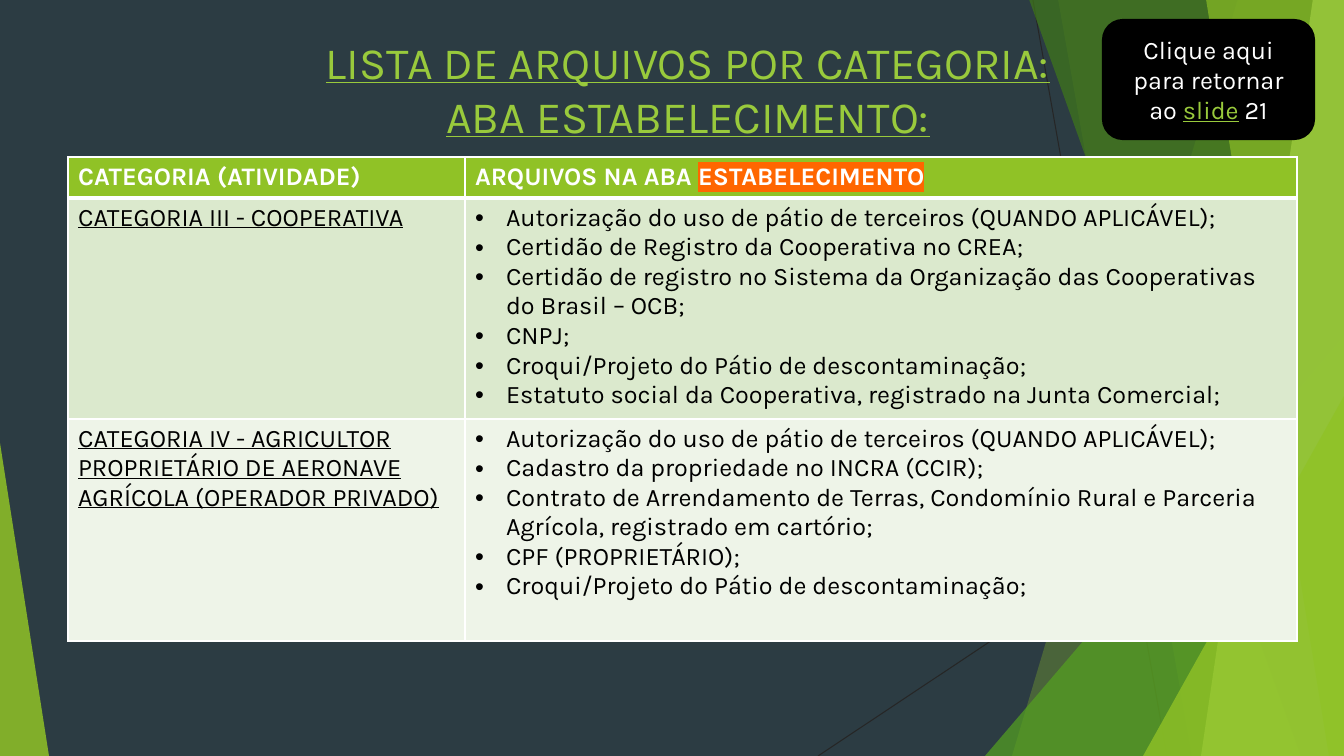
from lxml import etree
from pptx import Presentation
from pptx.dml.color import RGBColor
from pptx.enum.shapes import MSO_CONNECTOR, MSO_SHAPE
from pptx.enum.text import MSO_ANCHOR, MSO_AUTO_SIZE, PP_ALIGN
from pptx.oxml.ns import qn
from pptx.util import Pt

PX = 914400 / 100.8
WIDTH, HEIGHT = 1344, 756
TITLE_ONLY = 5
LINE = MSO_CONNECTOR.STRAIGHT
TRIANGLE, ROUNDED = MSO_SHAPE.ISOSCELES_TRIANGLE, MSO_SHAPE.ROUNDED_RECTANGLE
CENTER, LEFT = PP_ALIGN.CENTER, PP_ALIGN.LEFT
TOP, MIDDLE = MSO_ANCHOR.TOP, MSO_ANCHOR.MIDDLE
FONT = "Karla"
GREEN, LINK, WHITE, BLACK = "90C226", "99CA3C", "FFFFFF", "000000"

TITLE = ["LISTA DE ARQUIVOS POR CATEGORIA:", "ABA ESTABELECIMENTO:"]
CATEGORIES = [
    ("CATEGORIA III - COOPERATIVA", "DBE9CD", [
        "Autorização do uso de pátio de terceiros (QUANDO APLICÁVEL);",
        "Certidão de Registro da Cooperativa no CREA;",
        "Certidão de registro no Sistema da Organização das Cooperativas do Brasil – OCB;",
        "CNPJ;",
        "Croqui/Projeto do Pátio de descontaminação;",
        "Estatuto social da Cooperativa, registrado na Junta Comercial;",
    ]),
    ("CATEGORIA IV - AGRICULTOR PROPRIETÁRIO DE AERONAVE AGRÍCOLA (OPERADOR PRIVADO)", "EEF4E8", [
        "Autorização do uso de pátio de terceiros (QUANDO APLICÁVEL);",
        "Cadastro da propriedade no INCRA (CCIR);",
        "Contrato de Arrendamento de Terras, Condomínio Rural e Parceria Agrícola, "
        "registrado em cartório;",
        "CPF (PROPRIETÁRIO);",
        "Croqui/Projeto do Pátio de descontaminação;",
    ]),
]


def px(*lengths):
    return [round(length * PX) for length in lengths]


def color(value):
    return RGBColor.from_string(value)


def fill_shape(shape, value, opacity=100):
    shape.shadow.inherit = False
    shape.fill.solid()
    shape.fill.fore_color.rgb = color(value)
    shape.line.fill.background()
    if opacity < 100:
        tint = shape.fill._xPr.find(qn("a:solidFill"))[0]
        etree.SubElement(tint, qn("a:alpha"), val=str(opacity * 1000))


def add_run(para, text, value, size=18, bold=False, underline=False):
    run = para.add_run()
    run.text = text
    font = run.font
    font.name, font.size, font.bold, font.underline = FONT, Pt(size), bold, underline
    font.color.rgb = color(value)
    return run


def highlight(run, value):
    mark = etree.Element(qn("a:highlight"))
    etree.SubElement(mark, qn("a:srgbClr"), val=value)
    run.font.fill._xPr.find(qn("a:solidFill")).addnext(mark)


def add_bullet(para, indent):
    props = para._p.get_or_add_pPr()
    props.set("marL", str(indent))
    props.set("indent", str(-indent))
    etree.SubElement(props, qn("a:buFont"), typeface="Arial")
    etree.SubElement(props, qn("a:buChar"), char="•")


def set_borders(cell, top=1, bottom=1):
    props = cell._tc.get_or_add_tcPr()
    for place, (side, points) in enumerate(zip("LRTB", (1, 1, top, bottom))):
        border = etree.Element(qn(f"a:ln{side}"), w=str(Pt(points)))
        solid = etree.SubElement(border, qn("a:solidFill"))
        etree.SubElement(solid, qn("a:srgbClr"), val=WHITE)
        props.insert(place, border)


def draw_facets(page, width, height):
    # Thin crossing lines
    for ends in ((1033, 0, 1167, height), (width, 406, 818, height)):
        line = page.shapes.add_connector(LINE, *px(*ends))
        line.line.color.rgb = color("262626")
        line.line.width = Pt(0.75)
        etree.SubElement(line._element.spPr, qn("a:effectLst"))

    def band(top_x, bottom_x, value, opacity):
        builder = page.shapes.build_freeform(top_x, -1, scale=PX)
        builder.add_line_segments([(width, -1), (width, height), (bottom_x, height)])
        fill_shape(builder.convert_to_shape(), value, opacity)

    def triangle(left, top, right, tip, value, opacity):
        area = px(left, top, right - left, height - top)
        shape = page.shapes.add_shape(TRIANGLE, *area)
        shape.adjustments[0] = tip
        fill_shape(shape, value, opacity)

    # Translucent panels, back to front
    band(1238, 1012, GREEN, 30)
    band(1058, 1192, GREEN, 20)
    triangle(985, 336, width, 1, "54A021", 72)
    band(1029, 1301, "3F7819", 70)
    band(1313, 1201, "C0E474", 70)
    band(1206, 1329, GREEN, 65)
    triangle(1143, 396, width, 1, GREEN, 80)
    triangle(0, 443, 49, 0, GREEN, 85)


def place_title(page, box):
    title = page.shapes.title
    page.shapes.element.append(title.element)  # bring in front of the facets
    title.left, title.top, title.width, title.height = px(*box)
    frame = title.text_frame
    frame.word_wrap, frame.auto_size, frame.vertical_anchor = True, MSO_AUTO_SIZE.NONE, TOP
    for index, text in enumerate(TITLE):
        para = frame.add_paragraph() if index else frame.paragraphs[0]
        para.alignment = CENTER
        add_run(para, text, LINK, size=32, underline=True)


def add_file_table(page, box):
    heights = (41, 221, 222)
    table = page.shapes.add_table(3, 2, *px(*box)).table
    table.horz_banding = False
    table.columns[0].width, table.columns[1].width = px(397, box[2] - 397)
    for row, height in zip(table.rows, px(*heights)):
        row.height = height

    # Cell fills and borders
    fills = [GREEN] + [fill for _, fill, _ in CATEGORIES]
    for index, fill in enumerate(fills):
        for cell in table.rows[index].cells:
            cell.fill.solid()
            cell.fill.fore_color.rgb = color(fill)
            set_borders(cell, top=3 if index == 1 else 1, bottom=1 if index else 3)

    # Header
    left, right = [cell.text_frame.paragraphs[0] for cell in table.rows[0].cells]
    add_run(left, "CATEGORIA (ATIVIDADE)", WHITE, bold=True)
    add_run(right, "ARQUIVOS NA ABA ", WHITE, bold=True)
    highlight(add_run(right, "ESTABELECIMENTO", WHITE, bold=True), "FF6600")

    # Categories with their files
    for index, (name, _, files) in enumerate(CATEGORIES, 1):
        add_run(table.cell(index, 0).text_frame.paragraphs[0], name, BLACK, underline=True)
        frame = table.cell(index, 1).text_frame
        for order, text in enumerate(files):
            para = frame.add_paragraph() if order else frame.paragraphs[0]
            para.alignment = LEFT
            add_bullet(para, px(31)[0])
            add_run(para, text, BLACK)


def add_return_button(page, box):
    button = page.shapes.add_shape(ROUNDED, *px(*box))
    fill_shape(button, BLACK)
    button.line.color.rgb = color(BLACK)
    button.line.width = Pt(1.5)
    frame = button.text_frame
    frame.word_wrap, frame.vertical_anchor = True, MIDDLE
    para = frame.paragraphs[0]
    para.alignment = CENTER
    add_run(para, "Clique aqui para retornar ao ", WHITE)
    add_run(para, "slide", LINK, underline=True)
    add_run(para, " 21", WHITE)


def main():
    deck = Presentation()
    deck.slide_width, deck.slide_height = px(WIDTH, HEIGHT)
    page = deck.slides.add_slide(deck.slide_layouts[TITLE_ONLY])
    page.background.fill.solid()
    page.background.fill.fore_color.rgb = color("2C3C43")
    draw_facets(page, WIDTH, HEIGHT)
    place_title(page, (106, 30, 1164, 228))
    add_file_table(page, (68, 157, 1229, 484))
    add_return_button(page, (1103, 20, 211, 119))
    deck.save("out.pptx")


if __name__ == "__main__":
    main()
